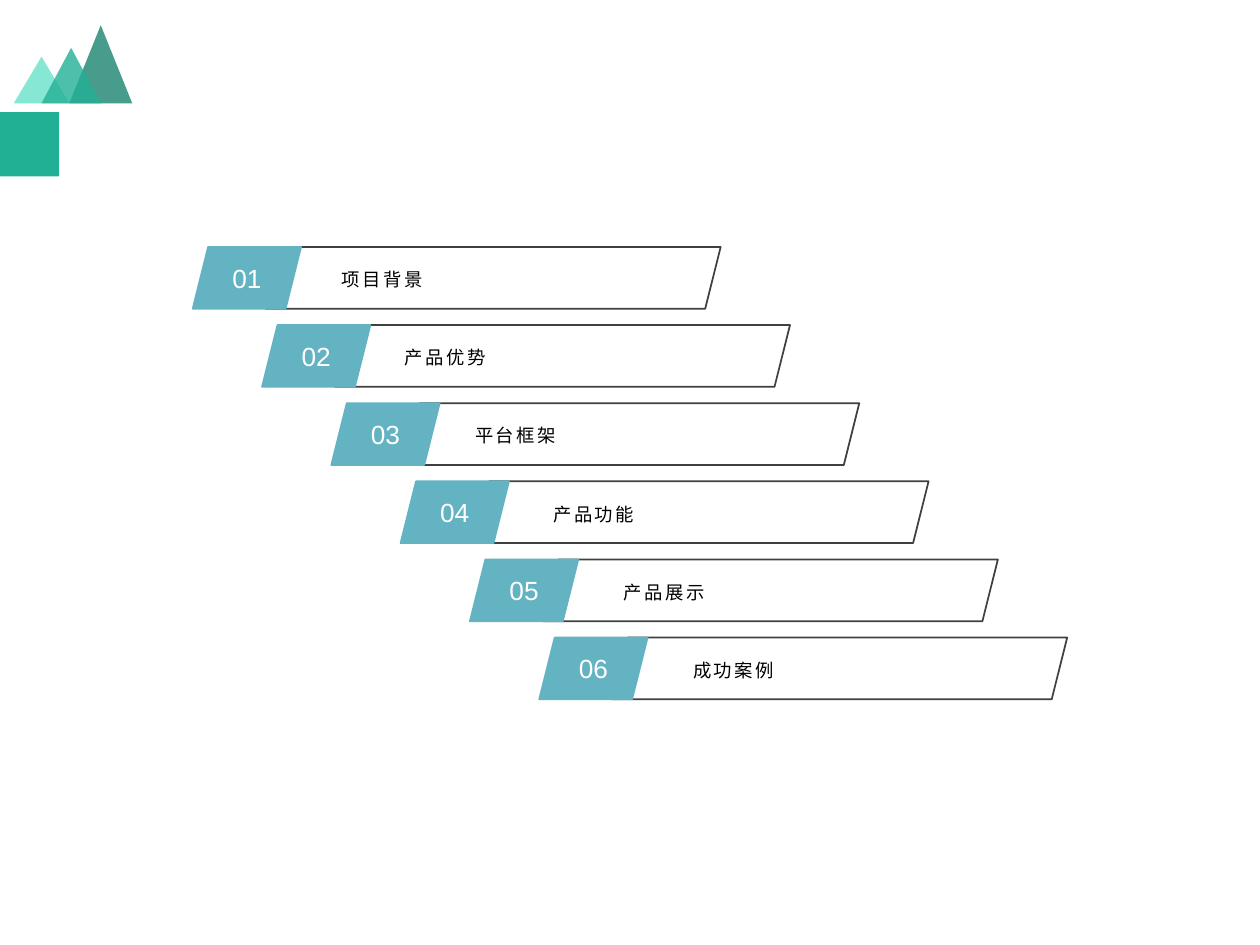
"""Build an agenda slide with six stepped, numbered items."""
from dataclasses import dataclass

from lxml.etree import SubElement
from pptx import Presentation
from pptx.dml.color import RGBColor
from pptx.enum.shapes import MSO_SHAPE
from pptx.enum.text import MSO_ANCHOR, PP_ALIGN
from pptx.oxml.ns import qn
from pptx.util import Inches, Pt

AGENDA = [
    ("项目背景", 2.64),
    ("产品优势", 3.14),
    ("平台框架", 3.70),
    ("产品功能", 4.32),
    ("产品展示", 4.88),
    ("成功案例", 5.43),
]
MOUNTAINS = [
    ("198470", (0.55, 0.2, 0.5, 0.62)),
    ("68E2CB", (0.11, 0.45, 0.44, 0.37)),
    ("22B095", (0.33, 0.38, 0.47, 0.44)),
]
CORNER_BLOCK = (0, 0.89, 0.47, 0.51)
FIRST_TOP, STEP_X, STEP_Y = 1.96, 0.55, 0.62
CHIP_LEFT, FRAME_LEFT = 1.53, 2.11
CHIP_WIDTH, FRAME_WIDTH, BAR_HEIGHT = 0.86, 3.61, 0.49
LABEL_DROP, LABEL_WIDTH, LABEL_HEIGHT = 0.1, 2.79, 0.28


@dataclass(frozen=True)
class Theme:
    block: str = "22B095"
    chip: str = "63B3C3"
    frame: str = "404040"
    number: str = "FFFFFF"
    label: str = "000000"
    number_font: str = "Arial"
    label_font: str = "Noto Sans CJK SC"
    number_size: float = 15
    label_size: float = 10.5
    label_spacing: float = 1.5
    line_width: float = 1
    mountain_opacity: int = 80


THEME = Theme()


def add_figure(shapes, preset, place, fill=None, line=None):
    figure = shapes.add_shape(preset, *map(Inches, place))
    figure.shadow.inherit = False
    if fill:
        figure.fill.solid()
        figure.fill.fore_color.rgb = RGBColor.from_string(fill)
    else:
        figure.fill.background()
    if line:
        figure.line.color.rgb = RGBColor.from_string(line)
        figure.line.width = Pt(THEME.line_width)
    else:
        figure.line.fill.background()
    return figure


def write(box, text, font, size, color, align):
    frame = box.text_frame
    frame.word_wrap = True
    frame.vertical_anchor = MSO_ANCHOR.MIDDLE
    frame.margin_left = frame.margin_right = Inches(0.07)
    frame.margin_top = frame.margin_bottom = Inches(0.04)
    para = frame.paragraphs[0]
    para.alignment = align
    span = para.add_run()
    span.text = text
    span.font.name = font
    span.font.size = Pt(size)
    span.font.color.rgb = RGBColor.from_string(color)
    return para, span


def add_decoration(page):
    group = page.shapes.add_group_shape()
    for color, place in MOUNTAINS:
        peak = add_figure(group.shapes, MSO_SHAPE.ISOSCELES_TRIANGLE, place, color)
        tint = peak.fill._xPr.find(".//" + qn("a:srgbClr"))
        SubElement(tint, qn("a:alpha"), val=str(THEME.mountain_opacity * 1000))
    add_figure(page.shapes, MSO_SHAPE.RECTANGLE, CORNER_BLOCK, THEME.block)


def add_bar(page, index):
    shift, top = index * STEP_X, FIRST_TOP + index * STEP_Y
    add_figure(page.shapes, MSO_SHAPE.PARALLELOGRAM,
               (FRAME_LEFT + shift, top, FRAME_WIDTH, BAR_HEIGHT), line=THEME.frame)
    chip = add_figure(page.shapes, MSO_SHAPE.PARALLELOGRAM,
                      (CHIP_LEFT + shift, top, CHIP_WIDTH, BAR_HEIGHT),
                      THEME.chip, THEME.chip)
    write(chip, f"{index + 1:02d}", THEME.number_font, THEME.number_size,
          THEME.number, PP_ALIGN.CENTER)


def add_label(page, index, text, left):
    top = FIRST_TOP + index * STEP_Y + LABEL_DROP
    box = page.shapes.add_textbox(
        *map(Inches, (left, top, LABEL_WIDTH, LABEL_HEIGHT)))
    para, span = write(box, text, THEME.label_font, THEME.label_size,
                       THEME.label, PP_ALIGN.LEFT)
    para.line_spacing = 1.2
    properties = span.font._element
    properties.set("spc", str(int(THEME.label_spacing * 100)))
    SubElement(properties, qn("a:ea"), typeface=THEME.label_font)


def main():
    deck = Presentation()
    deck.slide_width, deck.slide_height = Inches(10), Inches(7.5)
    page = deck.slides.add_slide(deck.slide_layouts[6])
    add_decoration(page)
    for index in range(len(AGENDA)):
        add_bar(page, index)
    for index, (text, left) in enumerate(AGENDA):
        add_label(page, index, text, left)
    deck.save("out.pptx")


if __name__ == "__main__":
    main()
